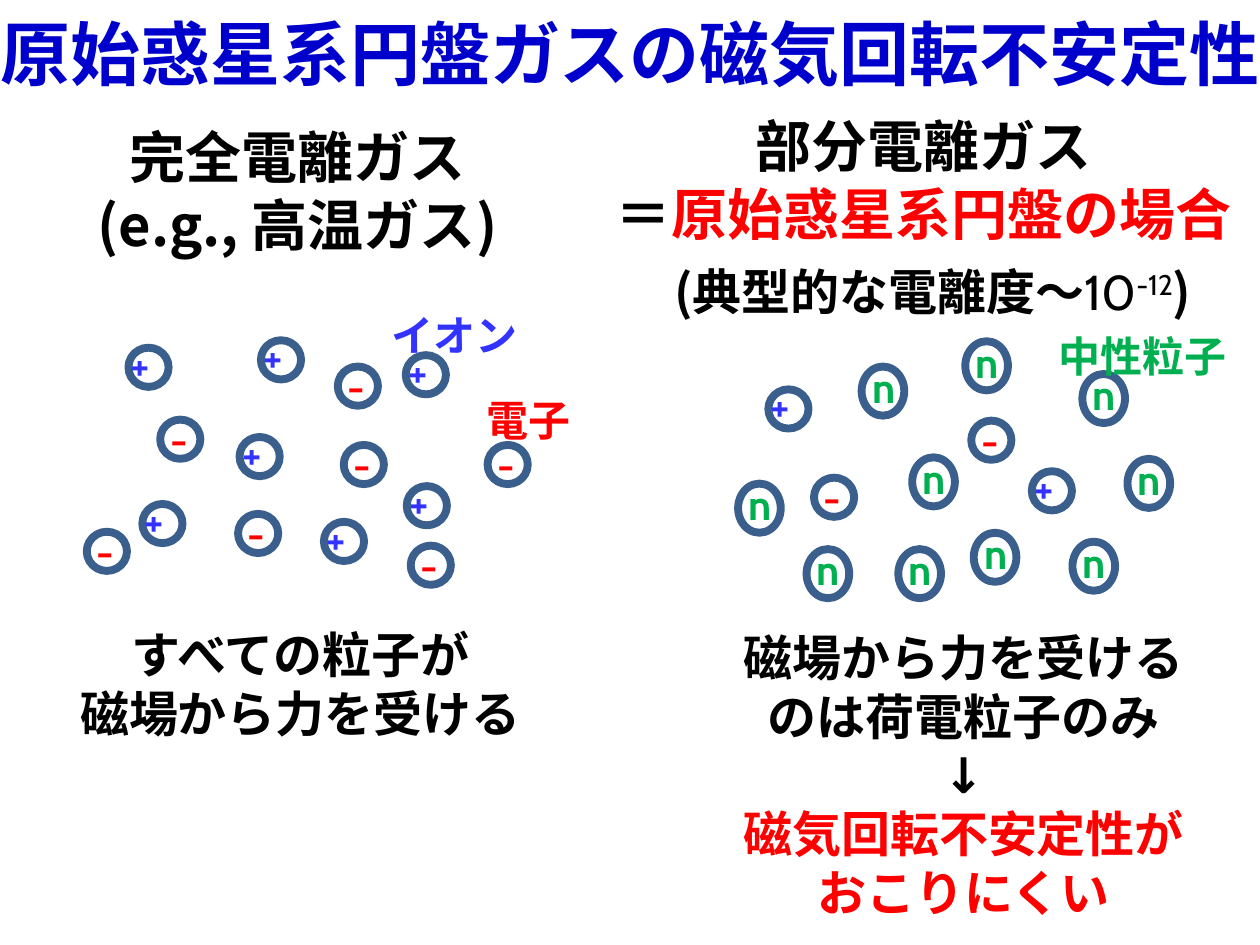
from dataclasses import dataclass

from lxml.etree import SubElement
from pptx import Presentation
from pptx.dml.color import RGBColor
from pptx.enum.shapes import MSO_SHAPE
from pptx.enum.text import MSO_ANCHOR, MSO_AUTO_SIZE, PP_ALIGN
from pptx.oxml.ns import qn
from pptx.util import Cm, Pt


@dataclass(frozen=True)
class Theme:
    black: str = "000000"
    title: str = "0000CC"
    ion: str = "3333FF"
    electron: str = "FF0000"
    neutral: str = "00B050"
    ring: str = "3A5F8C"
    title_font: str = "Arial"
    heading_font: str = "Comic Neue"
    body_font: str = "Cabin"
    cjk_font: str = "Noto Sans CJK JP"
    title_size: int = 40
    heading_size: int = 32
    body_size: int = 28
    label_size: int = 24
    ring_width: float = 4.5
    line_ratio: float = 1.21


THEME = Theme()


@dataclass(frozen=True)
class Piece:
    text: str
    color: str = THEME.black
    font: str = THEME.body_font
    bold: bool = True
    raised: bool = False


@dataclass(frozen=True)
class Block:
    """A centred text; each line is one piece or several. Lengths in cm."""
    left: float
    top: float
    width: float
    height: float
    size: int
    lines: tuple[tuple[Piece, ...], ...]


@dataclass(frozen=True)
class Particle:
    """A ring with a sign; the sign's box is offset from the ring. Lengths in cm."""
    sign: str
    color: str
    width: float
    height: float
    dx: float
    dy: float
    sign_width: float
    places: tuple[tuple[float, float], ...]


PARTICLES = (
    Particle("+", THEME.ion, 0.81, 0.79, -0.2, -0.32, 1.22, (
        (2.59, 7.01), (5.26, 6.86), (4.83, 8.81), (8.18, 7.16), (15.49, 7.85),
        (8.2, 9.8), (6.53, 10.52), (2.87, 10.16), (20.8, 9.5))),
    Particle("-", THEME.electron, 0.81, 0.79, -0.05, -0.25, 0.89, (
        (3.23, 8.46), (1.75, 10.72), (4.8, 10.36), (8.28, 11), (9.83, 8.97),
        (6.81, 7.39), (6.93, 8.97), (16.41, 9.63), (19.58, 8.48))),
    Particle("n", THEME.neutral, 0.86, 0.99, -0.04, -0.23, 1.07, (
        (18.11, 11.07), (17.37, 7.39), (18.39, 9.22), (19.63, 10.74), (16.26, 11.07),
        (21.62, 10.92), (14.88, 9.75), (22.73, 9.25), (19.46, 6.88), (21.82, 7.54))),
)
SIGN_HEIGHT = 1.27

TITLE = Block(-0.25, 0, 25.9, 2.11, THEME.title_size, (
    (Piece("原始惑星系円盤ガスの磁気回転不安定性", THEME.title, THEME.title_font),),))

HEADINGS = (
    Block(1.5, 2.34, 8.99, 3, THEME.heading_size, (
        (Piece("完全電離ガス", font=THEME.heading_font),),
        (Piece("(e.g., 高温ガス)", font=THEME.cjk_font),))),
    Block(12.12, 2.13, 13, 3, THEME.heading_size, (
        (Piece("部分電離ガス", font=THEME.heading_font),),
        (Piece("＝", font=THEME.heading_font),
         Piece("原始惑星系円盤の場合", THEME.electron, THEME.heading_font)))),
    Block(12.47, 5.13, 12.67, 1.45, THEME.body_size, (
        (Piece("(", font=THEME.cjk_font), Piece("典型的な電離度～"),
         Piece("10", bold=False), Piece("-12", bold=False, raised=True),
         Piece(")", font=THEME.cjk_font)),)),
)

CONCLUSIONS = (
    Block(1.24, 12.47, 9.63, 2.64, THEME.body_size, (
        (Piece("すべての粒子が"),),
        (Piece("磁場から力を受ける"),))),
    Block(14.61, 12.52, 9.63, 6.25, THEME.body_size, (
        (Piece("磁場から力を受けるのは荷電粒子のみ"),),
        (Piece("↓"),),
        (Piece("磁気回転不安定性が", THEME.electron),),
        (Piece("おこりにくい", THEME.electron),))),
)

LABELS = (
    Block(7.44, 6.12, 3.45, 1.27, THEME.label_size, ((Piece("イオン", THEME.ion),),)),
    Block(8.92, 7.82, 3.45, 1.27, THEME.label_size, ((Piece("電子", THEME.electron),),)),
    Block(20.96, 6.53, 4.14, 1.27, THEME.label_size, ((Piece("中性粒子", THEME.neutral),),)),
)


def set_font(font, piece: Piece, size: int) -> None:
    font.size = Pt(size)
    font.bold = piece.bold
    font.name = piece.font
    font.color.rgb = RGBColor.from_string(piece.color)
    # Japanese glyphs follow the same font's line height
    SubElement(font._rPr, qn("a:ea")).set("typeface", piece.font)
    if piece.raised:
        font._rPr.set("baseline", "30000")


def write_line(paragraph, pieces: tuple[Piece, ...], size: int) -> None:
    for piece in pieces:
        run = paragraph.add_run()
        run.text = piece.text
        if len(pieces) > 1:
            set_font(run.font, piece, size)
    if len(pieces) == 1:
        set_font(paragraph.font, pieces[0], size)
    # The CJK font is tall, so its lines get a fixed pitch
    if any(piece.font == THEME.cjk_font for piece in pieces):
        paragraph.line_spacing = Pt(round(size * THEME.line_ratio))


def draw_block(shapes, block: Block):
    box = shapes.add_textbox(Cm(block.left), Cm(block.top), Cm(block.width), Cm(block.height))
    frame = box.text_frame
    frame.word_wrap = True
    frame.auto_size = MSO_AUTO_SIZE.SHAPE_TO_FIT_TEXT
    for index, pieces in enumerate(block.lines):
        paragraph = frame.add_paragraph() if index else frame.paragraphs[0]
        paragraph.alignment = PP_ALIGN.CENTER
        write_line(paragraph, pieces, block.size)
    return frame


def draw_particle(shapes, particle: Particle, left: float, top: float) -> None:
    group = shapes.add_group_shape().shapes
    ring = group.add_shape(MSO_SHAPE.OVAL, Cm(left), Cm(top),
                           Cm(particle.width), Cm(particle.height))
    ring.shadow.inherit = False
    ring.fill.background()
    ring.line.color.rgb = RGBColor.from_string(THEME.ring)
    ring.line.width = Pt(THEME.ring_width)
    sign = group.add_textbox(Cm(left + particle.dx), Cm(top + particle.dy),
                             Cm(particle.sign_width), Cm(SIGN_HEIGHT))
    sign.text_frame.word_wrap = False
    sign.text_frame.auto_size = MSO_AUTO_SIZE.SHAPE_TO_FIT_TEXT
    write_line(sign.text_frame.paragraphs[0],
               (Piece(particle.sign, particle.color),), THEME.label_size)


def main() -> None:
    presentation = Presentation()
    presentation.slide_width, presentation.slide_height = Cm(25.4), Cm(19.05)
    shapes = presentation.slides.add_slide(presentation.slide_layouts[6]).shapes

    # Title across the full width
    title = draw_block(shapes, TITLE)
    title.auto_size = MSO_AUTO_SIZE.NONE
    title.vertical_anchor = MSO_ANCHOR.MIDDLE
    title.margin_left = title.margin_right = 0

    # Particles of both gases
    for particle in PARTICLES:
        for left, top in particle.places:
            draw_particle(shapes, particle, left, top)

    # Headings, conclusions and particle names
    for block in HEADINGS + CONCLUSIONS + LABELS:
        draw_block(shapes, block)

    presentation.save("out.pptx")


if __name__ == "__main__":
    main()
